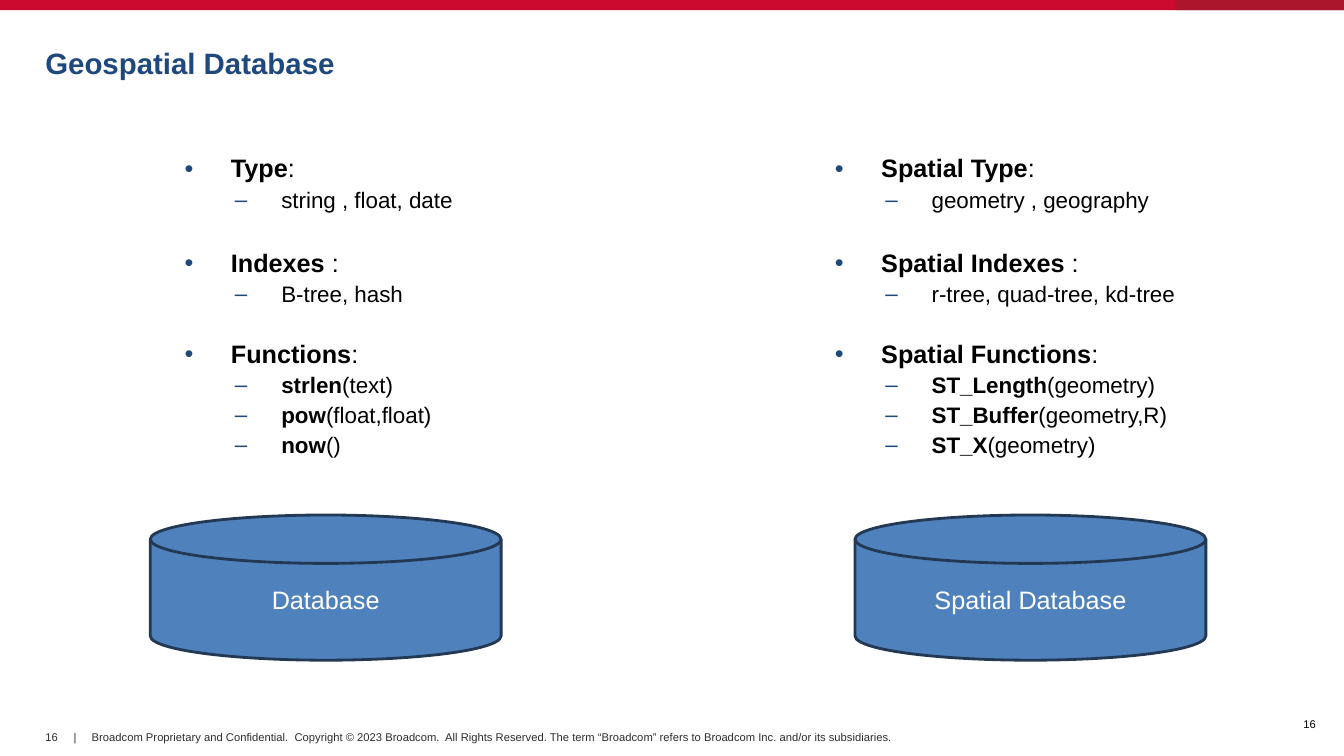
"""Build the slide that compares a plain database with a spatial database."""
from dataclasses import dataclass

from lxml import etree
from pptx import Presentation
from pptx import util as u
from pptx.dml import color
from pptx.enum import shapes, text
from pptx.oxml import ns


@dataclass(frozen=True)
class Theme:
    font: str = "Arial"
    navy: str = "1F497D"
    black: str = "000000"
    grey: str = "2D2D2D"
    white: str = "FFFFFF"
    red: str = "CC092F"
    dark_red: str = "AB162C"
    disk: str = "4F81BD"
    disk_edge: str = "233953"
    title: int = 21
    heading: int = 18
    detail: int = 16
    footer: int = 8


theme = Theme()


def add_span(para, words, size, shade, bold=False):
    span = para.add_run()
    span.text = words
    look = {"name": theme.font, "size": u.Pt(size), "bold": bold}
    for key, value in look.items():
        setattr(span.font, key, value)
    span.font.color.rgb = color.RGBColor.from_string(shade)


def add_box(place, anchor):
    box = page.shapes.add_textbox(*map(u.Inches, place))
    layout = {"margin_left": 0, "margin_right": 0, "margin_top": 0,
              "margin_bottom": 0, "word_wrap": True, "vertical_anchor": anchor}
    for key, value in layout.items():
        setattr(box.text_frame, key, value)
    return box.text_frame


deck = Presentation()
deck.slide_width, deck.slide_height = u.Inches(13.33), u.Inches(7.5)
page = deck.slides.add_slide(deck.slide_layouts[6])
middle, top = text.MSO_ANCHOR.MIDDLE, text.MSO_ANCHOR.TOP
left, right = text.PP_ALIGN.LEFT, text.PP_ALIGN.RIGHT

for start, width, shade in [(0, 13.33, theme.red), (11.66, 1.67, theme.dark_red)]:
    band = page.shapes.add_shape(shapes.MSO_SHAPE.RECTANGLE, u.Inches(start), 0,
                                 u.Inches(width), u.Inches(0.1))
    band.shadow.inherit = False
    band.fill.solid()
    band.fill.fore_color.rgb = color.RGBColor.from_string(shade)
    band.line.fill.background()

notice = ("Broadcom Proprietary and Confidential.  Copyright © 2023 Broadcom.  "
          "All Rights Reserved. The term “Broadcom” refers to Broadcom Inc. "
          "and/or its subsidiaries.")
labels = [
    ((0.45, 0.45, 12.43, 0.4), "Geospatial Database", theme.title, theme.navy, True, left, 0.85),
    ((0.45, 7.25, 0.14, 0.13), "16", theme.footer, theme.grey, False, left, 1.0),
    ((0.73, 7.25, 0.06, 0.13), "|", theme.footer, theme.grey, False, left, 1.0),
    ((0.91, 7.25, 8, 0.13), notice, theme.footer, theme.grey, False, left, 1.0),
    ((12.57, 6.99, 0.48, 0.4), "16", theme.footer, theme.black, False, right, 0.9),
]
for place, words, size, shade, bold, align, spacing in labels:
    para = add_box(place, middle).paragraphs[0]
    para.alignment, para.line_spacing = align, spacing
    add_span(para, words, size, shade, bold)

levels = [("•", 0.67, theme.heading), ("–", 1.17, theme.detail)]
gaps = [0, 4, 26.6, 4, 24.5, 4, 4, 4]
columns = [
    (0.97, 6.45, 1.49, "Database", [
        (0, "Type", ":"), (1, "", "string , float, date"),
        (0, "Indexes", " :"), (1, "", "B-tree, hash"),
        (0, "Functions", ":"), (1, "strlen", "(text)"),
        (1, "pow", "(float,float)"), (1, "now", "()")]),
    (7.42, 5.91, 8.48, "Spatial Database", [
        (0, "Spatial Type", ":"), (1, "", "geometry , geography"),
        (0, "Spatial Indexes", " :"), (1, "", "r-tree, quad-tree, kd-tree"),
        (0, "Spatial Functions", ":"), (1, "ST_Length", "(geometry)"),
        (1, "ST_Buffer", "(geometry,R)"), (1, "ST_X", "(geometry)")]),
]
for list_left, list_width, disk_left, disk_name, entries in columns:
    frame = add_box((list_left, 1.55, list_width, 3.3), top)
    frame.margin_left = u.Inches(0.65)
    for index, ((level, strong, plain), gap) in enumerate(zip(entries, gaps)):
        para = frame.add_paragraph() if index else frame.paragraphs[0]
        mark, indent, size = levels[level]
        props = para._p.get_or_add_pPr()
        props.set("marL", str(u.Inches(indent)))
        props.set("indent", str(u.Inches(-0.46)))
        tint = etree.SubElement(props, ns.qn("a:buClr"))
        etree.SubElement(tint, ns.qn("a:srgbClr"), val=theme.navy)
        etree.SubElement(props, ns.qn("a:buFont"), typeface=theme.font)
        etree.SubElement(props, ns.qn("a:buChar"), char=mark)
        spacing = {"level": level, "line_spacing": 0.9, "space_before": u.Pt(gap)}
        for key, value in spacing.items():
            setattr(para, key, value)
        if strong:
            add_span(para, strong, size, theme.black, True)
        add_span(para, plain, size, theme.black)

    disk = page.shapes.add_shape(shapes.MSO_SHAPE.FLOWCHART_MAGNETIC_DISK,
                                 *map(u.Inches, (disk_left, 5.11, 3.48, 1.44)))
    disk.shadow.inherit = False
    disk.fill.solid()
    disk.fill.fore_color.rgb = color.RGBColor.from_string(theme.disk)
    disk.line.color.rgb = color.RGBColor.from_string(theme.disk_edge)
    disk.line.width = u.Pt(2)
    disk.text_frame.vertical_anchor = middle
    para = disk.text_frame.paragraphs[0]
    para.alignment = text.PP_ALIGN.CENTER
    add_span(para, disk_name, theme.heading, theme.white)

deck.save("out.pptx")
